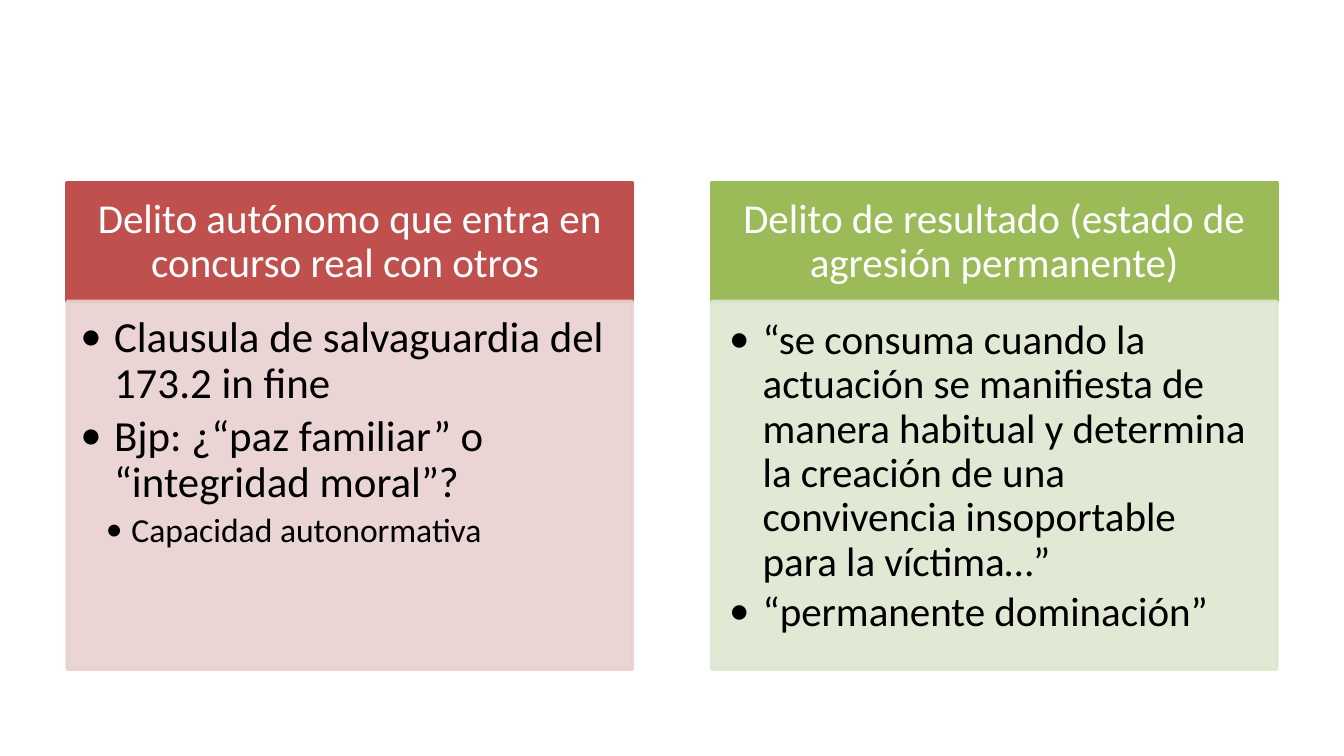
"""Build a slide with two headed panels about the nature of the offence."""
from dataclasses import dataclass

from lxml import etree
from pptx import Presentation
from pptx.dml.color import RGBColor
from pptx.enum.shapes import MSO_SHAPE
from pptx.enum.text import MSO_ANCHOR, PP_ALIGN
from pptx.oxml.ns import qn
from pptx.util import Inches, Pt

RECTANGLE = MSO_SHAPE.RECTANGLE
TOP, MIDDLE = MSO_ANCHOR.TOP, MSO_ANCHOR.MIDDLE
LEFT, CENTER = PP_ALIGN.LEFT, PP_ALIGN.CENTER

RED = RGBColor(0xC0, 0x50, 0x4D)
PALE_RED = RGBColor(0xE8, 0xD0, 0xD0)
GREEN = RGBColor(0x9B, 0xBB, 0x59)
PALE_GREEN = RGBColor(0xDE, 0xE7, 0xD1)
WHITE = RGBColor(0xFF, 0xFF, 0xFF)
BLACK = RGBColor(0x00, 0x00, 0x00)

FONT = "Calibri"
SLIDE_WIDTH = Inches(10)
SLIDE_HEIGHT = SLIDE_WIDTH * 9 // 16
MARGIN, COLUMN_WIDTH = 5, 42.05
COLUMN_PITCH = 100 - 2 * MARGIN - COLUMN_WIDTH
HEADER_TOP, HEADER_HEIGHT, BODY_HEIGHT = 24.2, 15.7, 48.6
HEADER_SIZE = 22
HEADER_INSETS = (0.17, 0.1, 0.17, 0.1)


@dataclass(frozen=True)
class Bullet:
    text: str
    size: int
    level: int = 1
    indent: float = 0.25
    hanging: float = 0.25


@dataclass(frozen=True)
class Panel:
    title: str
    header_color: RGBColor
    body_color: RGBColor
    insets: tuple[float, float, float, float]
    bullets: tuple[Bullet, ...]


PANELS = (
    Panel("Delito autónomo que entra en concurso real con otros ",
          RED, PALE_RED, (0.1, 0.1, 0.14, 0.16),
          (Bullet("Clausula de salvaguardia del 173.2 in fine", 23),
           Bullet("Bjp: ¿“paz familiar” o “integridad moral”?", 23),
           Bullet("Capacidad autonormativa", 18, 2, 0.38, 0.19))),
    Panel("Delito de resultado (estado de agresión permanente)",
          GREEN, PALE_GREEN, (0.13, 0.13, 0.17, 0.19),
          (Bullet("“se consuma cuando la actuación se manifiesta de manera "
                  "habitual y determina la creación de una convivencia "
                  "insoportable para la víctima…”", 22),
           Bullet("“permanente dominación”", 22))),
)


def add_box(slide, left: float, top: float, height: float, color: RGBColor,
            insets: tuple[float, float, float, float], anchor: MSO_ANCHOR):
    """Add a filled rectangle placed in percentages of the slide."""
    shape = slide.shapes.add_shape(
        RECTANGLE, int(SLIDE_WIDTH * left / 100), int(SLIDE_HEIGHT * top / 100),
        int(SLIDE_WIDTH * COLUMN_WIDTH / 100), int(SLIDE_HEIGHT * height / 100))
    shape.shadow.inherit = False
    shape.fill.solid()
    shape.fill.fore_color.rgb = color
    shape.line.color.rgb = color
    shape.line.width = Pt(2)
    frame = shape.text_frame
    frame.word_wrap = True
    frame.vertical_anchor = anchor
    (frame.margin_left, frame.margin_top,
     frame.margin_right, frame.margin_bottom) = map(Inches, insets)
    return shape


def make_translucent(shape, percent: int) -> None:
    """Set the opacity of the fill and outline of a shape."""
    for color in shape.fill._xPr.iter(qn("a:srgbClr")):
        etree.SubElement(color, qn("a:alpha"), val=str(percent * 1000))


def style_paragraph(paragraph, text: str, size: int, color: RGBColor,
                    alignment: PP_ALIGN, space_share: float) -> None:
    """Write a paragraph with its font, alignment and spacing."""
    paragraph.text = text
    paragraph.alignment = alignment
    paragraph.line_spacing = 0.9
    paragraph.space_after = Pt(round(size * space_share, 1))
    paragraph.font.name = FONT
    paragraph.font.size = Pt(size)
    paragraph.font.color.rgb = color


def add_bullet_mark(paragraph, bullet: Bullet) -> None:
    """Give a paragraph its level, hanging indent and bullet sign."""
    paragraph.level = bullet.level
    properties = paragraph._p.get_or_add_pPr()
    properties.set("marL", str(Inches(bullet.indent)))
    properties.set("indent", str(-Inches(bullet.hanging)))
    etree.SubElement(properties, qn("a:buFont"), typeface=FONT)
    etree.SubElement(properties, qn("a:buChar"), char="•")


def add_panel(slide, panel: Panel, left: float) -> None:
    """Draw a header and the bulleted body below it."""
    header = add_box(slide, left, HEADER_TOP, HEADER_HEIGHT,
                     panel.header_color, HEADER_INSETS, MIDDLE)
    style_paragraph(header.text_frame.paragraphs[0], panel.title,
                    HEADER_SIZE, WHITE, CENTER, 0.35)
    body = add_box(slide, left, HEADER_TOP + HEADER_HEIGHT, BODY_HEIGHT,
                   panel.body_color, panel.insets, TOP)
    make_translucent(body, 90)
    frame = body.text_frame
    for index, bullet in enumerate(panel.bullets):
        paragraph = frame.add_paragraph() if index else frame.paragraphs[0]
        add_bullet_mark(paragraph, bullet)
        style_paragraph(paragraph, bullet.text, bullet.size, BLACK, LEFT, 0.15)


def main() -> None:
    """Create and save the presentation."""
    presentation = Presentation()
    presentation.slide_width = SLIDE_WIDTH
    presentation.slide_height = SLIDE_HEIGHT
    slide = presentation.slides.add_slide(presentation.slide_layouts[6])
    for column, panel in enumerate(PANELS):
        add_panel(slide, panel, MARGIN + column * COLUMN_PITCH)
    presentation.save("out.pptx")


if __name__ == "__main__":
    main()
